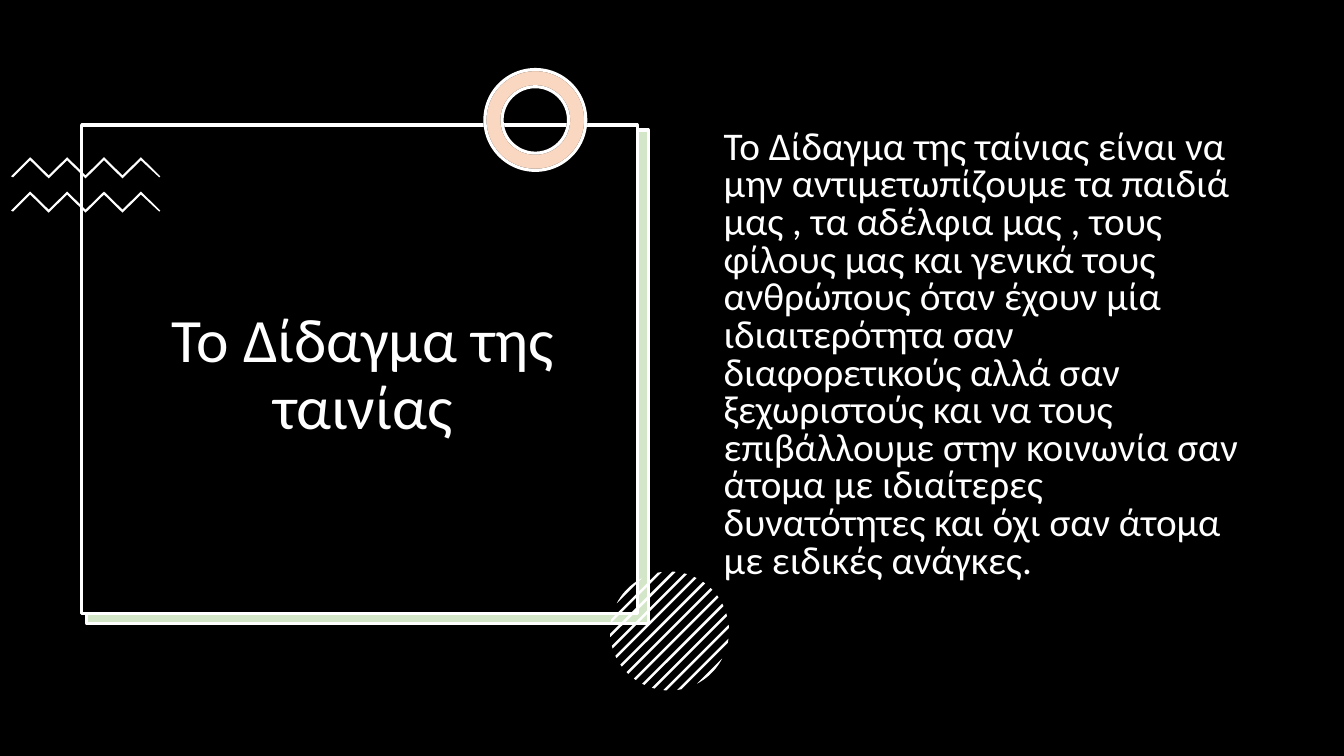
"""Build the slide on the moral of the film."""
import math

import lxml.etree
import pptx
import pptx.util
import pptx.dml.color
import pptx.enum.shapes
import pptx.enum.text
import pptx.oxml.ns
from pptx.util import Inches

TITLE = "Το Δίδαγμα της ταινίας"
BODY = (
    "Το Δίδαγμα της ταίνιας είναι να μην αντιμετωπίζουμε τα παιδιά μας , "
    "τα αδέλφια μας , τους φίλους μας και γενικά τους ανθρώπους όταν έχουν "
    "μία ιδιαιτερότητα σαν διαφορετικούς αλλά σαν ξεχωριστούς και να τους "
    "επιβάλλουμε στην κοινωνία σαν άτομα με ιδιαίτερες δυνατότητες και όχι "
    "σαν άτομα με ειδικές ανάγκες."
)
THEME = {
    "font": "Calibri", "title": 44, "body": 28, "line": 2.25,
    "black": "000000", "white": "FFFFFF", "green": "70AD47",
    "orange": "ED7D31", "tint": 30,
}
SHAPE = pptx.enum.shapes.MSO_SHAPE
ALIGN = pptx.enum.text.PP_ALIGN
ANCHOR = pptx.enum.text.MSO_ANCHOR

RING = (4.81, 0.69, 1, 1)
PANELS = [
    (SHAPE.RECTANGLE, (0, 0, 13.33, 7.5), "black", None, None),
    (SHAPE.RECTANGLE, (0.85, 1.3, 5.57, 4.9), "white", None, None),
    (SHAPE.RECTANGLE, (0.86, 1.29, 5.57, 4.9), "green", "white", THEME["tint"]),
    (SHAPE.RECTANGLE, (0.81, 1.24, 5.51, 4.85), "black", "white", None),
]
RINGS = [
    (SHAPE.DONUT, RING, "white", "black", None),
    (SHAPE.DONUT, RING, "orange", "white", THEME["tint"]),
]
WAVES = {"left": 0.11, "tops": (1.56, 1.9), "step": 0.183}
DISC = {"x": 6.64, "y": 6.26, "r": 0.59, "pitch": 0.096, "half": 0.0125}


def color(name):
    return pptx.dml.color.RGBColor.from_string(THEME[name])


def paint(shape, fill, line=None, alpha=None):
    shape.shadow.inherit = False
    shape.fill.solid()
    shape.fill.fore_color.rgb = color(fill)
    if alpha:
        tag = pptx.oxml.ns.qn("a:srgbClr")
        node = next(shape.element.spPr.iter(tag))
        lxml.etree.SubElement(
            node, pptx.oxml.ns.qn("a:alpha"), val=str(alpha * 1000))
    if line:
        shape.line.color.rgb = color(line)
        shape.line.width = pptx.util.Pt(THEME["line"])
    else:
        shape.line.fill.background()


def panel(shapes, kind, box, fill, line, alpha):
    shape = shapes.add_shape(kind, *map(Inches, box))
    if kind == SHAPE.DONUT:
        shape.adjustments[0] = 0.17
    paint(shape, fill, line, alpha)


def outline(shapes, points):
    dots = [(Inches(x), Inches(y)) for x, y in points]
    maker = shapes.build_freeform(*dots[0], scale=1.0)
    maker.add_line_segments(dots[1:], close=True)
    paint(maker.convert_to_shape(), "white")


def wave(left, top, step):
    bends = [(0.19 + step * i, 0.18 * (i % 2)) for i in range(7)]
    upper = [(0, 0.19), *bends, (1.48, 0.19)]
    lower = [(0.02, 0.2), *((x, y + 0.03) for x, y in bends), (1.47, 0.2)]
    return [(left + x, top + y) for x, y in upper + lower[::-1]]


def stripe(row):
    mid = row * DISC["pitch"]
    start, end = (
        math.acos((mid + side * DISC["half"]) / DISC["r"]) for side in (-1, 1))
    arc = [start + (end - start) * i / 6 for i in range(7)]
    turns = [math.pi / 4 + t for t in arc + [-t for t in arc[::-1]]]
    return [(DISC["x"] + DISC["r"] * math.cos(t),
             DISC["y"] + DISC["r"] * math.sin(t)) for t in turns]


def write(shape, text, box, size, align=ALIGN.LEFT, anchor=ANCHOR.TOP,
          space=1.0, before=0):
    shape.left, shape.top, shape.width, shape.height = map(Inches, box)
    frame = shape.text_frame
    frame.word_wrap = True
    frame.auto_size = pptx.enum.text.MSO_AUTO_SIZE.NONE
    frame.vertical_anchor = anchor
    para = frame.paragraphs[0]
    para.alignment = align
    para.line_spacing = space
    para.space_before = pptx.util.Pt(before)
    run = para.add_run()
    run.text = text
    run.font.name = THEME["font"]
    run.font.size = pptx.util.Pt(THEME[size])
    run.font.color.rgb = color("white")


def main():
    deck = pptx.Presentation()
    deck.slide_width, deck.slide_height = Inches(13.33), Inches(7.5)
    slide = deck.slides.add_slide(deck.slide_layouts[5])
    shapes = slide.shapes
    for item in PANELS:
        panel(shapes, *item)
    waves = shapes.add_group_shape()
    for top in WAVES["tops"]:
        outline(waves.shapes, wave(WAVES["left"], top, WAVES["step"]))
    for item in RINGS:
        panel(shapes, *item)
    disc = shapes.add_group_shape()
    for row in range(-6, 7):
        outline(disc.shapes, stripe(row))
    title = shapes.title
    title.element.getparent().append(title.element)
    write(title, TITLE, (0.92, 1.52, 5.36, 4.42), "title",
          align=ALIGN.CENTER, anchor=ANCHOR.MIDDLE, space=0.9)
    box = (7.08, 1.24, 5.44, 4.76)
    body = shapes.add_textbox(*map(Inches, box))
    write(body, BODY, box, "body", space=0.8, before=10)
    deck.save("out.pptx")


if __name__ == "__main__":
    main()
